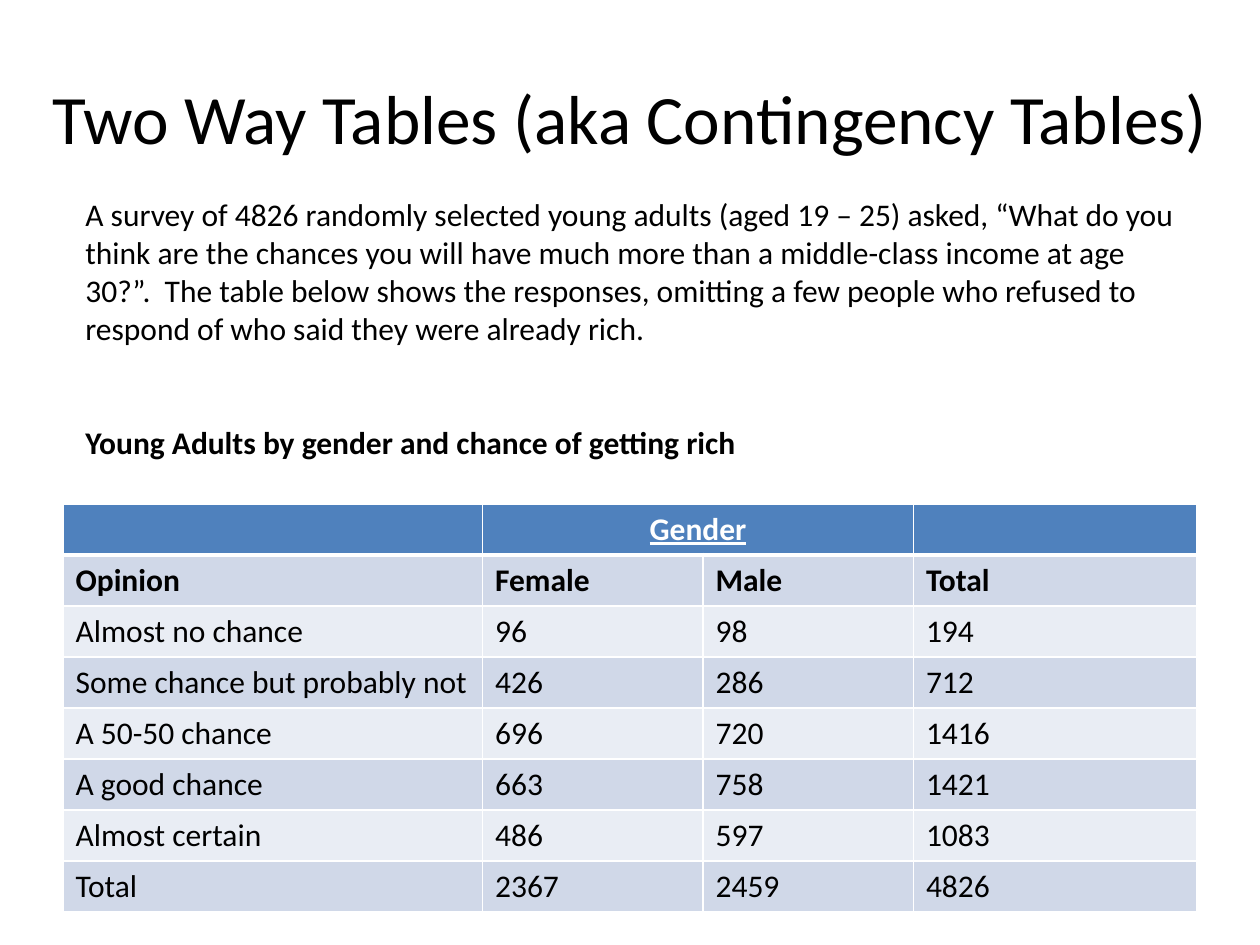
from dataclasses import dataclass

from lxml import etree
from pptx import Presentation
from pptx.dml.color import RGBColor
from pptx.enum.text import MSO_ANCHOR, PP_ALIGN
from pptx.oxml.ns import qn
from pptx.util import Inches, Pt

CENTER = PP_ALIGN.CENTER
LEFT = PP_ALIGN.LEFT
MIDDLE = MSO_ANCHOR.MIDDLE
TOP = MSO_ANCHOR.TOP

BLACK = "000000"
WHITE = "FFFFFF"
HEADER_FILL = "4F81BD"
BAND_FILLS = ("D0D8E8", "E9EDF4")

SURVEY = (
    "A survey of 4826 randomly selected young adults (aged 19 – 25) asked, "
    "“What do you think are the chances you will have much more than a "
    "middle-class income at age 30?”.  The table below shows the responses, "
    "omitting a few people who refused to respond of who said they were "
    "already rich."
)
CAPTION = "Young Adults by gender and chance of getting rich"
COLUMN_WIDTHS = (3.33, 1.75, 1.67, 2.25)
TABLE_HEIGHT = 3.24
ROWS = (
    ("", "Gender", "", ""),
    ("Opinion", "Female", "Male", "Total"),
    ("Almost no chance", "96", "98", "194"),
    ("Some chance but probably not", "426", "286", "712"),
    ("A 50-50 chance", "696", "720", "1416"),
    ("A good chance", "663", "758", "1421"),
    ("Almost certain", "486", "597", "1083"),
    ("Total", "2367", "2459", "4826"),
)


@dataclass(frozen=True)
class TextStyle:
    """Look of one paragraph."""

    size: float = 18
    color: str = BLACK
    bold: bool = False
    underline: bool = False
    align: PP_ALIGN = LEFT
    space_before: float = 0


BODY = TextStyle()
TITLE = TextStyle(size=39.6, align=CENTER)
CAPTION_STYLE = TextStyle(bold=True, space_before=44)
GENDER = TextStyle(color=WHITE, bold=True, underline=True, align=CENTER)
SUBHEADER = TextStyle(bold=True)


def rgb(color: str) -> RGBColor:
    """Turn a hex string into a colour."""
    return RGBColor.from_string(color)


def write_paragraph(paragraph, text: str, style: TextStyle) -> None:
    """Fill a paragraph with styled text."""
    paragraph.text = text
    paragraph.alignment = style.align
    paragraph.space_before = Pt(style.space_before)
    font = paragraph.font
    font.name = "Calibri"
    font.size = Pt(style.size)
    font.bold = style.bold
    font.underline = style.underline
    font.color.rgb = rgb(style.color)


def add_text(slide, box: tuple, content: list, anchor: MSO_ANCHOR) -> None:
    """Add a wrapped text box with one paragraph per text and style pair."""
    frame = slide.shapes.add_textbox(*map(Inches, box)).text_frame
    frame.word_wrap = True
    frame.vertical_anchor = anchor
    for index, (text, style) in enumerate(content):
        paragraph = frame.add_paragraph() if index else frame.paragraphs[0]
        write_paragraph(paragraph, text, style)


def set_borders(cell, bottom: float, top: float) -> None:
    """Draw white lines around a cell."""
    properties = cell._tc.get_or_add_tcPr()
    widths = {"a:lnL": 1, "a:lnR": 1, "a:lnT": top, "a:lnB": bottom}
    for index, (tag, width) in enumerate(widths.items()):
        line = etree.Element(qn(tag), w=str(Pt(width)))
        fill = etree.SubElement(line, qn("a:solidFill"))
        etree.SubElement(fill, qn("a:srgbClr"), val=WHITE)
        properties.insert(index, line)


def add_opinion_table(slide) -> None:
    """Add the table of opinions by gender."""
    frame = slide.shapes.add_table(
        len(ROWS), len(COLUMN_WIDTHS),
        Inches(0.5), Inches(4), Inches(sum(COLUMN_WIDTHS)), Inches(TABLE_HEIGHT),
    )
    table = frame.table
    for column, width in zip(table.columns, COLUMN_WIDTHS):
        column.width = Inches(width)
    row_styles = {0: GENDER, 1: SUBHEADER}
    for row_index, texts in enumerate(ROWS):
        fill = BAND_FILLS[(row_index - 1) % 2] if row_index else HEADER_FILL
        for column_index, text in enumerate(texts):
            cell = table.cell(row_index, column_index)
            cell.fill.solid()
            cell.fill.fore_color.rgb = rgb(fill)
            set_borders(
                cell,
                bottom=3 if row_index == 0 else 1,
                top=3 if row_index == 1 else 1,
            )
            style = row_styles.get(row_index, BODY)
            write_paragraph(cell.text_frame.paragraphs[0], text, style)
    table.cell(0, 1).merge(table.cell(0, 2))


def main() -> None:
    """Build and save the slide."""
    presentation = Presentation()
    presentation.slide_width = Inches(10)
    presentation.slide_height = Inches(7.5)
    slide = presentation.slides.add_slide(presentation.slide_layouts[6])
    add_text(
        slide, (0, 0.3, 10, 1.25),
        [("Two Way Tables (aka Contingency Tables)", TITLE)], MIDDLE,
    )
    add_opinion_table(slide)
    add_text(
        slide, (0.58, 1.5, 9, 2.22),
        [(SURVEY, BODY), (CAPTION, CAPTION_STYLE)], TOP,
    )
    presentation.save("out.pptx")


if __name__ == "__main__":
    main()
